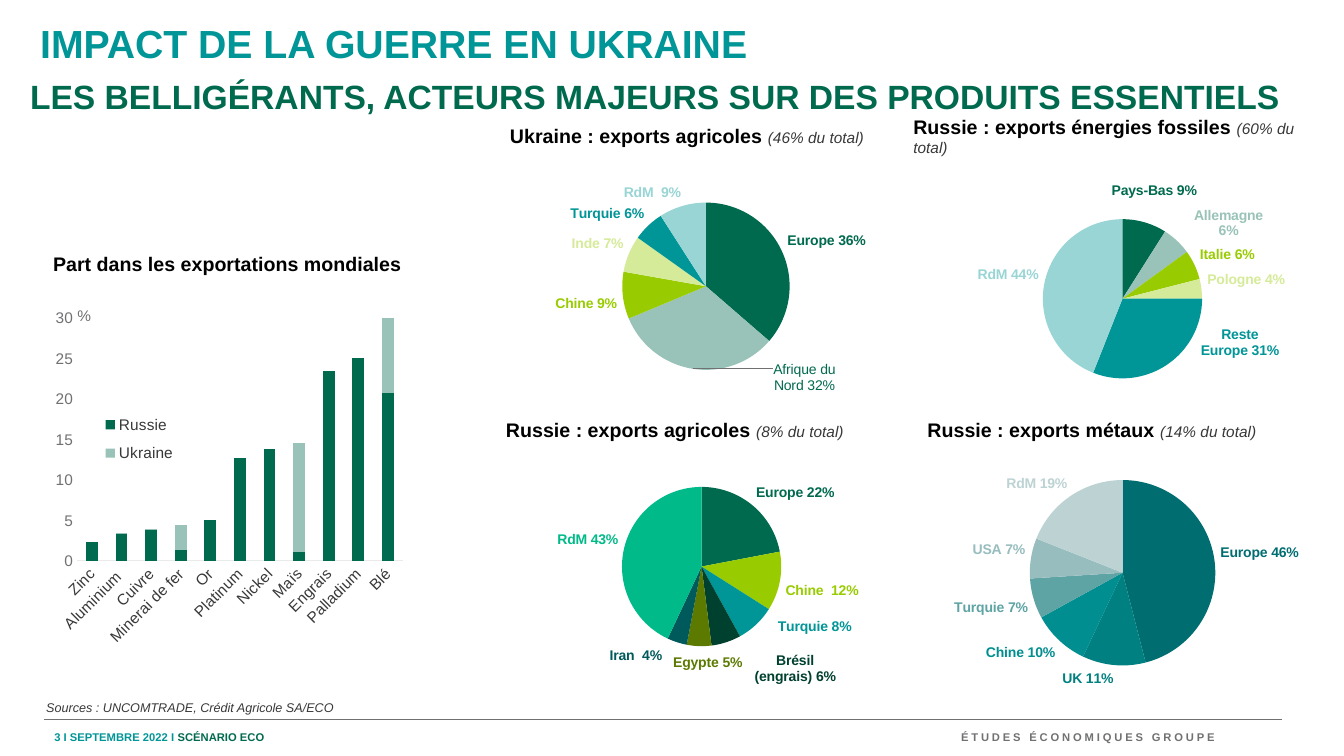
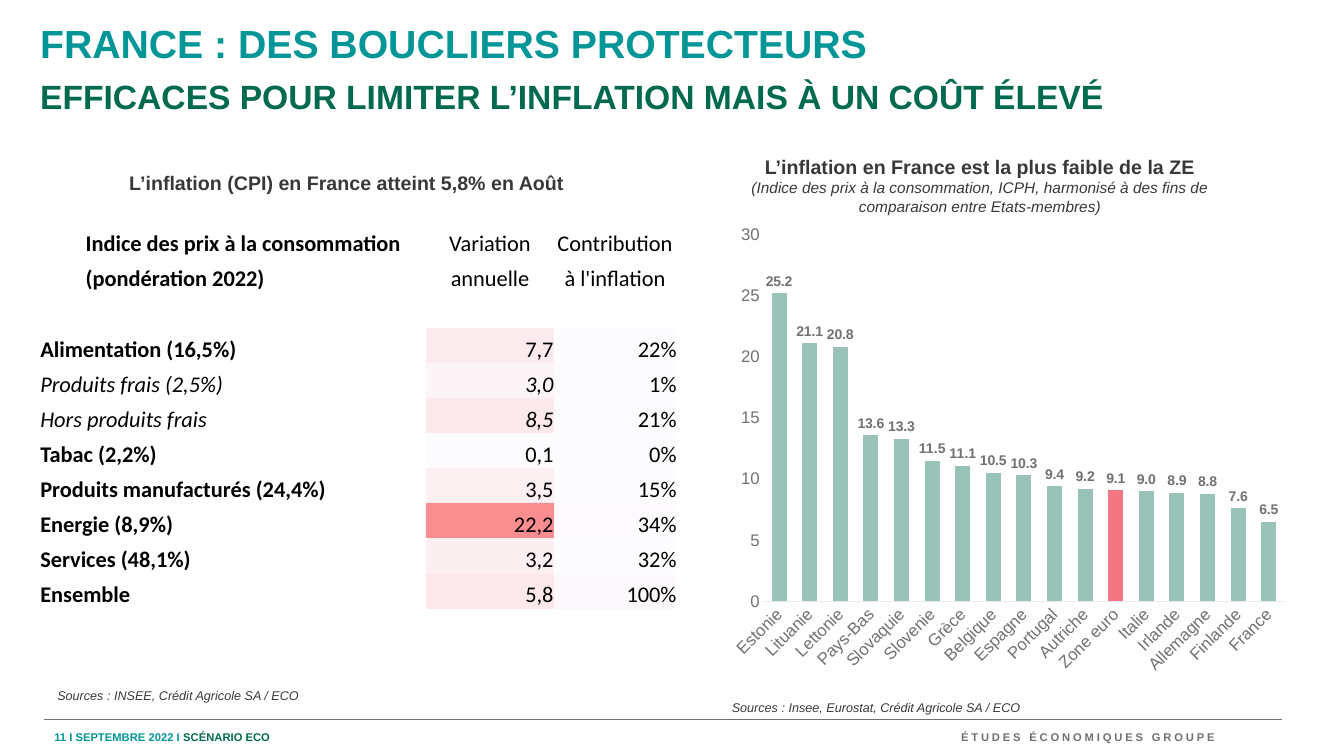
from dataclasses import dataclass
from lxml.etree import SubElement as Sub
from pptx import Presentation
from pptx.chart.data import CategoryChartData as Data
from pptx.dml.color import RGBColor as Rgb
from pptx.enum.chart import XL_CHART_TYPE as Kind, XL_LABEL_POSITION as Pos
from pptx.enum.chart import XL_LEGEND_POSITION as Side, XL_TICK_MARK as Tick
from pptx.enum.text import MSO_ANCHOR as Anchor, PP_ALIGN as Align
from pptx.oxml import parse_xml
from pptx.oxml.ns import nsdecls, qn
from pptx.util import Inches, Pt


@dataclass(frozen=True)
class Theme:
    """Colours, fonts and type sizes of the deck."""
    teal: str = "009597"
    green: str = "006A4E"
    sage: str = "99C3B8"
    lime: str = "99CC00"
    pale: str = "D6EB99"
    sky: str = "99D5D5"
    rose: str = "F47682"
    ink: str = "38383A"
    grey: str = "707173"
    rule: str = "E9EAEA"
    black: str = "000000"
    font: str = "Arial"
    cell: str = "Calibri"
    grid: str = "{2D5ABB26-0587-4C30-8999-92F81FD0307C}"
    title: int = 28
    sub: int = 24
    body: int = 16
    head: int = 14
    axis: int = 12
    note: int = 11
    label: int = 10
    source: int = 9
    foot: int = 8


T = Theme()
WIDE, HIGH = 13.33, 7.5


def style(font, size, color, bold=False, italic=False, name=T.font):
    """Format a font."""
    font.name, font.size, font.bold, font.italic = name, Pt(size), bold, italic
    font.color.rgb = Rgb.from_string(color)


def write(slide, box, paras, align=Align.LEFT, anchor=Anchor.MIDDLE):
    """Place a text box; each paragraph is a list of (text, *style) runs."""
    frame = slide.shapes.add_textbox(*map(Inches, box)).text_frame
    frame.word_wrap, frame.vertical_anchor = True, anchor
    for i, runs in enumerate(paras):
        para = frame.paragraphs[0] if i == 0 else frame.add_paragraph()
        para.alignment = align
        for text, *look in runs:
            run = para.add_run()
            run.text = text
            style(run.font, *look)
    return frame


def frame(deck, page, title, sub, left=0.3):
    """Add a slide with its titles, rule and footer."""
    slide = deck.slides.add_slide(deck.slide_layouts[6])
    write(slide, (0.3, 0.18, 11.95, 0.5), [[(title, T.title, T.teal, True)]])
    write(slide, (left, 0.7, WIDE - left - 0.24, 0.55),
          [[(sub, T.sub, T.green, True)]], anchor=Anchor.TOP)
    y = HIGH - 0.36
    line = slide.shapes.add_connector(1, *map(Inches, (0.44, y, 12.72, y)))
    line.line.color.rgb, line.line.width = Rgb.from_string(T.grey), Pt(0.5)
    Sub(line._element.spPr, qn("a:effectLst"))
    write(slide, (0.44, 7.17, 5.59, 0.28),
          [[(f"{page} Ι SEPTEMBRE 2022 Ι ", T.foot, T.teal, True),
            ("SCÉNARIO ECO", T.foot, T.green, True)]])
    group = write(slide, (7.58, 7.14, 4.57, 0.34),
                  [[("ÉTUDES ÉCONOMIQUES GROUPE", T.foot, T.grey, True)]], Align.RIGHT)
    group.paragraphs[0].runs[0].font._element.set("spc", "200")
    return slide


def source(slide, box, text):
    """Write a source line."""
    write(slide, box, [[(text, T.source, T.ink, False, True)]])


def layout(edge=True, inner=False, **spots):
    """Build a manual chart layout from shares."""
    node = parse_xml(f"<c:layout {nsdecls('c')}><c:manualLayout/></c:layout>")
    if inner:
        Sub(node[0], qn("c:layoutTarget")).set("val", "inner")
    if edge:
        for tag in ("xMode", "yMode"):
            Sub(node[0], qn(f"c:{tag}")).set("val", "edge")
    for tag, val in spots.items():
        Sub(node[0], qn(f"c:{tag}")).set("val", f"{val:.4f}")
    return node


def plant(parent, node, after=None):
    """Replace the layout of a chart part."""
    for old in parent.findall(qn("c:layout")):
        parent.remove(old)
    if after is None:
        parent.insert(0, node)
    else:
        after.addnext(node)


def graph(slide, box, kind, cats, rows, fmt, size, plot):
    """Add a chart with a fixed plot area."""
    data = Data(number_format=fmt)
    data.categories = cats
    for name, vals in rows:
        data.add_series(name, vals)
    chart = slide.shapes.add_chart(kind, *map(Inches, box), data).chart
    chart.has_title = chart.has_legend = False
    style(chart.font, size, T.grey)
    area = chart._chartSpace.find(".//" + qn("c:plotArea"))
    plant(area, layout(inner=True, **dict(zip("xywh", plot))))
    return chart


def paint(part, color):
    """Fill a series or point."""
    part.format.fill.solid()
    part.format.fill.fore_color.rgb = Rgb.from_string(color)


def lead(chart, shown):
    """Show thin grey leader lines, or none."""
    for old in chart._chartSpace.findall(".//" + qn("c:showLeaderLines")):
        old.set("val", str(int(shown)))
        if shown:
            old.addnext(parse_xml(
                f'<c:leaderLines {nsdecls("c", "a")}><c:spPr><a:ln w="6350"><a:solidFill>'
                f'<a:srgbClr val="{T.grey}"/></a:solidFill></a:ln></c:spPr></c:leaderLines>'))


def pie(slide, box, head, share, spot, rows, moves, drawn=None):
    """Place a headed pie; moves shift labels, drawn names the one with a leader."""
    x, y, w, h = box
    cx, cy, r = spot
    hx, hy, hw = head[1]
    write(slide, (hx, hy, hw, 0.4),
          [[(head[0] + " ", T.head, T.black, True),
            (f"({share} du total)", T.note, T.ink, False, True)]])
    names, vals, tints = zip(*rows)
    chart = graph(slide, box, Kind.PIE, names, [("Part", vals)], "0%", T.label,
                  (cx - r / w, cy - r / h, 2 * r / w, 2 * r / h))
    points = chart.plots[0].series[0].points
    for i, tint in enumerate(tints):
        paint(points[i], tint)
        label = points[i].data_label
        style(label.font, T.label, T.green if i == drawn else tint, i != drawn)
        label.position = Pos.OUTSIDE_END
        node = label._dLbl
        for tag in ("showVal", "showCatName"):
            node.find(qn(f"c:{tag}")).set("val", "1")
        for tag in ("showLegendKey", "showSerName", "showPercent"):
            node.find(qn(f"c:{tag}")).set("val", "0")
        Sub(node, qn("c:separator")).text = " "
        if i in moves:
            dx, dy = moves[i]
            plant(node, layout(edge=False, x=dx, y=dy), node[0])
    lead(chart, drawn is not None)


def bars(slide, box, kind, cats, rows, tints, look, plot):
    """Place a column chart; look is (type size, category colour, gap, overlap)."""
    size, ink, gap, lap = look
    chart = graph(slide, box, kind, cats, rows, "0.0", size, plot)
    body = chart.plots[0]
    body.gap_width, body.overlap, body.vary_by_categories = gap, lap, False
    for part, tint in zip(body.series, tints):
        paint(part, tint)
    cat, val = chart.category_axis, chart.value_axis
    for axis, tint in ((cat, ink), (val, T.grey)):
        axis.has_major_gridlines = False
        axis.major_tick_mark = axis.minor_tick_mark = Tick.NONE
        style(axis.tick_labels.font, size, tint)
    cat.format.line.color.rgb, cat.format.line.width = Rgb.from_string(T.rule), Pt(0.75)
    cat._element.find(qn("c:txPr")).find(qn("a:bodyPr")).set("rot", "-2700000")
    val.format.line.fill.background()
    val.minimum_scale, val.maximum_scale, val.major_unit = 0, 30, 5
    val.tick_labels.number_format, val.tick_labels.number_format_is_linked = "0", False
    return chart


def world(slide, box):
    """Place the stacked chart of shares in world exports."""
    x, y, w, h = box
    write(slide, (x - 0.26, y - 0.68, w + 0.52, 0.59),
          [[("Part dans les exportations mondiales", T.head, T.black, True)]], Align.CENTER)
    cats = ("Zinc", "Aluminium ", "Cuivre", "Minerai de fer", "Or", "Platinum",
            "Nickel", "Maïs", "Engrais", "Palladium", "Blé")
    rows = (("Russie", (2.3, 3.4, 3.8, 1.4, 5.1, 12.7, 13.8, 1.1, 23.4, 25.1, 20.7)),
            ("Ukraine", (0, 0.1, 0.1, 3, 0, 0, 0, 13.5, 0, 0, 9.4)))
    chart = bars(slide, box, Kind.COLUMN_STACKED, cats, rows, (T.green, T.sage),
                 (T.note, T.ink, 150, 100), (0.107, 0.044, 0.852, 0.685))
    chart.has_legend = True
    key = chart.legend
    key.position, key.include_in_layout = Side.BOTTOM, False
    style(key.font, T.note, T.ink)
    plant(key._element, layout(x=0.16, y=0.29, w=0.22, h=0.19),
          key._element.find(qn("c:legendPos")))
    unit = chart.category_axis.axis_title
    unit.text_frame.text = "%"
    style(unit.text_frame.paragraphs[0].runs[0].font, T.note, T.grey)
    plant(unit._element, layout(x=0.1, y=0), unit._element.find(qn("c:tx")))


def prices(slide, box):
    """Place the table of consumer prices."""
    rows = (
        ("Indice des prix à la consommation", "Variation", "Contribution"),
        ("(pondération 2022)", "annuelle", "à l'inflation"),
        ("", "", ""),
        ("Alimentation (16,5%)", "7,7", "22%", "FCEBEE", "FCFCFF"),
        ("Produits frais (2,5%)", "3,0", "1%", "FCF5F8", "FCFCFF"),
        ("Hors produits frais", "8,5", "21%", "FCE9EC", "FCFCFF"),
        ("Tabac (2,2%)", "0,1", "0%", "FCFCFF", "FCFCFF"),
        ("Produits manufacturés (24,4%)", "3,5", "15%", "FCF0F3", "FCFCFF"),
        ("Energie (8,9%)", "22,2", "34%", "F98D8F", "FCFAFD"),
        ("Services (48,1%)", "3,2", "32%", "FCEFF2", "FCFBFE"),
        ("Ensemble", "5,8", "100%", "FCE7EA", "FCF8FB"))
    table = slide.shapes.add_table(len(rows), 3, *map(Inches, box)).table
    table.first_row = table.horz_banding = False
    table._tbl.tblPr.find(qn("a:tableStyleId")).text = T.grid
    for col, wide in zip(table.columns, (3.83, 1.26, 1.22)):
        col.width = Inches(wide)
    for r, (name, rate, part, *fills) in enumerate(rows):
        slant = r in (4, 5)
        for c, text in enumerate((name, rate, part)):
            cell = table.cell(r, c)
            cell.margin_left = Inches(0.45 if r < 2 and c == 0 else 0)
            cell.margin_right = cell.margin_top = cell.margin_bottom = 0
            cell.vertical_anchor = Anchor.BOTTOM
            if c and fills:
                paint_cell(cell, fills[c - 1])
            else:
                cell.fill.background()
            para = cell.text_frame.paragraphs[0]
            para.text = text
            para.alignment = Align.LEFT if c == 0 else Align.CENTER if r < 2 else Align.RIGHT
            for run in para.runs:
                style(run.font, T.body, T.black, c == 0 and not slant, slant and c < 2, T.cell)


def paint_cell(cell, color):
    """Fill a table cell."""
    cell.fill.solid()
    cell.fill.fore_color.rgb = Rgb.from_string(color)


def zone(slide, box):
    """Place the chart of inflation across the euro area."""
    x, y, w, h = box
    write(slide, (x, y - 0.6, 5.12, 0.59),
          [[("L’inflation en France est la plus faible de la ZE", T.head, T.ink, True)],
           [("(Indice des prix à la consommation, ICPH, harmonisé à des fins de "
             "comparaison entre Etats-membres)", T.note, T.ink, False, True)]], Align.CENTER)
    cats = ("Estonie", "Lituanie", "Lettonie", "Pays-Bas", "Slovaquie", "Slovenie",
            "Grèce", "Belgique", "Espagne", "Portugal", "Autriche", "Zone euro",
            "Italie", "Irlande", "Allemagne", "Finlande", "France")
    vals = (25.2, 21.1, 20.8, 13.6, 13.3, 11.5, 11.1, 10.5, 10.3, 9.4, 9.2, 9.1,
            9, 8.9, 8.8, 7.6, 6.5)
    chart = bars(slide, box, Kind.COLUMN_CLUSTERED, cats, [("Inflation", vals)], (T.sage,),
                 (T.axis, T.grey, 103, -27), (0.073, 0.04, 0.907, 0.785))
    row = chart.plots[0].series[0]
    paint(row.points[cats.index("Zone euro")], T.rose)
    tags = row.data_labels
    tags.show_value, tags.position = True, Pos.OUTSIDE_END
    tags.number_format, tags.number_format_is_linked = "0.0", False
    style(tags.font, T.label, T.grey, True)


def war(deck):
    """Build the slide on the war in Ukraine."""
    slide = frame(deck, 3, "IMPACT DE LA GUERRE EN UKRAINE",
                  "LES BELLIGÉRANTS, ACTEURS MAJEURS SUR DES PRODUITS ESSENTIELS", 0.2)
    source(slide, (0.36, 6.92, 3.93, 0.2), "Sources : UNCOMTRADE, Crédit Agricole SA/ECO")
    world(slide, (0.36, 3, 3.79, 3.52))
    pie(slide, (8.89, 4.54, 4.4, 2.38), ("Russie : exports métaux", (9.1, 4.06, 3.98)),
        "14%", (0.51, 0.48, 0.92),
        (("Europe", 0.46, "006E70"), ("UK", 0.11, "008081"), ("Chine", 0.1, "008E90"),
         ("Turquie", 0.07, "5EA4A5"), ("USA", 0.07, "97BDBE"), ("RdM", 0.19, "BDD3D3")), {})
    pie(slide, (4.72, 4.47, 4.39, 2.45), ("Russie : exports agricoles", (4.92, 4.06, 4.63)),
        "8%", (0.51, 0.47, 0.79),
        (("Europe", 0.22, T.green), ("Chine ", 0.12, T.lime), ("Turquie", 0.08, T.teal),
         ("Brésil (engrais)", 0.06, "00402F"), ("Egypte", 0.05, "5C7A00"),
         ("Iran ", 0.04, "00595B"), ("RdM", 0.43, "00BB89")),
        {2: (0.04, -0.04), 3: (0.06, 0.02), 4: (0.02, 0.01), 5: (-0.03, 0)})
    pie(slide, (4.61, 1.69, 4.6, 2.5), ("Ukraine : exports agricoles", (4.96, 1.15, 4.63)),
        "46%", (0.52, 0.46, 0.83),
        (("Europe", 0.36, T.green), ("Afrique du Nord", 0.32, T.sage),
         ("Chine", 0.09, T.lime), ("Inde", 0.07, T.pale), ("Turquie", 0.06, T.teal),
         ("RdM ", 0.09, T.sky)), {1: (0.31, -0.05)}, 1)
    pie(slide, (8.94, 1.67, 4.3, 2.49),
        ("Russie : exports énergies fossiles", (8.96, 1.15, 4.35)),
        "60%", (0.51, 0.52, 0.79),
        (("Pays-Bas", 0.09, T.green), ("Allemagne", 0.06, T.sage), ("Italie", 0.06, T.lime),
         ("Pologne", 0.04, T.pale), ("Reste Europe", 0.31, T.teal), ("RdM", 0.44, T.sky)),
        {0: (-0.08, -0.07), 1: (0.03, 0.01), 4: (0.07, -0.17)})


def shield(deck):
    """Build the slide on French inflation."""
    slide = frame(deck, 11, "FRANCE : DES BOUCLIERS PROTECTEURS",
                  "EFFICACES POUR LIMITER L’INFLATION MAIS À UN COÛT ÉLEVÉ")
    write(slide, (0.77, 1.52, 5.34, 0.59),
          [[("L’inflation (CPI) en France atteint 5,8% en Août", T.head, T.ink, True)]],
          Align.CENTER)
    source(slide, (0.47, 6.78, 5.12, 0.24), "Sources : INSEE, Crédit Agricole SA / ECO")
    source(slide, (7.16, 6.9, 5.12, 0.24), "Sources : Insee, Eurostat, Crédit Agricole SA / ECO")
    prices(slide, (0.4, 2.21, 6.31, 3.83))
    zone(slide, (7.16, 2.14, 5.69, 4.64))


if __name__ == "__main__":
    deck = Presentation()
    deck.slide_width, deck.slide_height = Inches(WIDE), Inches(HIGH)
    war(deck)
    shield(deck)
    deck.save("out.pptx")
